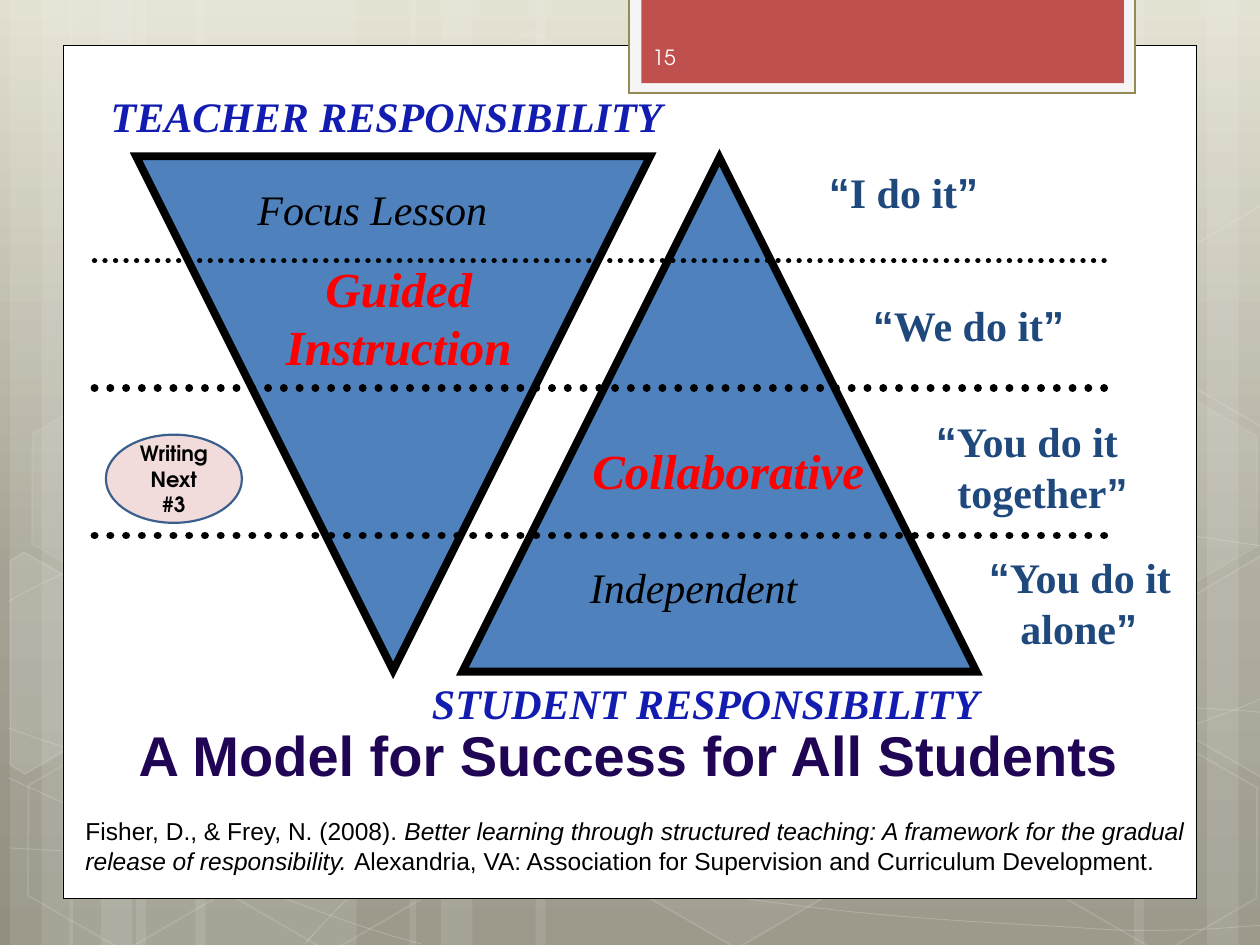
from copy import deepcopy
from math import cos, radians, sin
from lxml.etree import SubElement
from pptx import Presentation
from pptx.dml.color import RGBColor
from pptx.enum.dml import MSO_LINE
from pptx.enum.shapes import MSO_CONNECTOR, MSO_SHAPE
from pptx.enum.text import MSO_ANCHOR, PP_ALIGN
from pptx.oxml.ns import qn
from pptx.util import Cm, Pt

SERIF, SANS, ROUND = "Times New Roman", "Arial", "TeX Gyre Adventor"
WHITE, BLACK, RED, NAVY, BLUE = "FFFFFF", "000000", "FF0000", "1F497D", "131CB0"
OPEN, CLOSE = ("“", {"font": SANS}), ("”", {"font": SANS})


def size(*nums):
    """Turn inches into lengths."""
    return [Cm(2.54 * n) for n in nums]


def rgb(code):
    return RGBColor.from_string(code)


def fade(part, alpha):
    """Set the opacity, in percent, of the colour in a fill or line element."""
    if alpha < 100:
        tone = part.find(".//" + qn("a:srgbClr"))
        SubElement(tone, qn("a:alpha"), val=str(alpha * 1000))


def write(frame, paras, wrap=True, align=PP_ALIGN.LEFT, anchor=MSO_ANCHOR.TOP,
          indent=0, **base):
    """Fill a frame; a paragraph is a list of runs, each text or (text, format)."""
    frame.word_wrap, frame.vertical_anchor = wrap, anchor
    for i, runs in enumerate(paras):
        para = frame.add_paragraph() if i else frame.paragraphs[0]
        para.alignment = align
        if i and indent:
            para._p.get_or_add_pPr().set("marL", str(size(indent)[0]))
        for item in runs:
            text, extra = (item, {}) if isinstance(item, str) else item
            form = {"font": SERIF, "pt": 24, "color": BLACK, "bold": False,
                    "italic": False, **base, **extra}
            run = para.add_run()
            run.text = text
            run.font.name, run.font.size = form["font"], Pt(form["pt"])
            run.font.bold, run.font.italic = form["bold"], form["italic"]
            run.font.color.rgb = rgb(form["color"])


def spin(points, mid, angle):
    """Turn points about a middle, clockwise by an angle in degrees."""
    c, s = cos(radians(angle)), sin(radians(angle))
    gaps = [(x - mid[0], y - mid[1]) for x, y in points]
    return [(mid[0] + x * c - y * s, mid[1] + x * s + y * c) for x, y in gaps]


def bend(shape):
    """Make each three straight steps of an outline one cubic curve."""
    steps = list(shape.element.iter(qn("a:lnTo")))
    for first in steps[::3]:
        k = steps.index(first)
        arc = first.makeelement(qn("a:cubicBezTo"))
        first.addprevious(arc)
        for step in steps[k:k + 3]:
            arc.append(step[0])
            step.getparent().remove(step)


class Page:
    def __init__(self, slide):
        self.slide, self.shapes = slide, slide.shapes

    def backdrop(self, stops):
        fill = self.slide.background.fill
        fill.gradient()
        fill.gradient_angle = 270
        first = next(self.slide.element.iter(qn("a:gs")))
        first.addnext(deepcopy(first))
        for stop, (place, code) in zip(fill.gradient_stops, stops):
            stop.position, stop.color.rgb = place, rgb(code)

    def paint(self, shape, fill=None, alpha=100, line=None, width=1, clear=100):
        shape.shadow.inherit = False
        props = shape.element.spPr
        if fill:
            shape.fill.solid()
            shape.fill.fore_color.rgb = rgb(fill)
            fade(props.find(qn("a:solidFill")), alpha)
        else:
            shape.fill.background()
        if line:
            shape.line.color.rgb, shape.line.width = rgb(line), Pt(width)
            edge = props.find(qn("a:ln"))
            fade(edge, clear)
            SubElement(edge, qn("a:miter"), lim="800000")
        else:
            shape.line.fill.background()
        return shape

    def shape(self, kind, place, turn=0, adjust=None, **look):
        shape = self.shapes.add_shape(kind, *size(*place))
        shape.rotation = turn
        if adjust:
            shape.adjustments[0] = adjust
        return self.paint(shape, **look)

    def outline(self, points, close=False, **look):
        dots = [size(*dot) for dot in points]
        pen = self.shapes.build_freeform(*dots[0], scale=1.0)
        pen.add_line_segments(dots[1:], close=close)
        return self.paint(pen.convert_to_shape(), line=WHITE, **look)

    def wave(self, points):
        bend(self.outline(points, width=0.5, clear=20))

    def cut(self, points, mid, **look):
        """Draw a tilted hexagon that is cut off at the slide's edge."""
        self.outline(spin(points, mid, -30), close=True, clear=12, **look).rotation = 30

    def dots(self, y, width):
        line = self.shapes.add_connector(MSO_CONNECTOR.STRAIGHT, *size(0.75, y, 8.83, y))
        line.line.color.rgb, line.line.width = rgb(BLACK), Pt(width)
        line.line.dash_style = MSO_LINE.ROUND_DOT
        line.element.spPr.find(qn("a:ln")).set("cap", "rnd")
        SubElement(line.element.spPr, qn("a:effectLst"))

    def text(self, place, paras, **form):
        write(self.shapes.add_textbox(*size(*place)).text_frame, paras, **form)

    def title(self, place, text, **form):
        title = self.shapes.title
        title.left, title.top, title.width, title.height = size(*place)
        title.element.getparent().append(title.element)
        write(title.text_frame, [[text]], **form)


def scenery(page):
    page.backdrop([(0, "E2DFCF"), (0.62, "A5A293"), (1, "928F80")])
    bands = [(1.08, 1.75, 0), (0.08, 0.5, 0), (0.33, 0.83, 0), (1.55, 1.75, 0),
             (0.55, 0.5, 0), (0.8, 0.83, 0), (7.33, 1.75, 180), (9.58, 0.5, 180),
             (9, 0.83, 180), (4.25, 3.08, 0), (3.25, 0.5, 0), (3.5, 0.83, 0)]
    for x, wide, turn in bands:
        page.shape(MSO_SHAPE.RECTANGLE, (x, 0, wide, 7.5), turn=turn, fill=WHITE, alpha=10)
    waves = [
        [(0.07, 6.73), (0.61, 6.76), (1.15, 6.79), (1.9, 6.78), (2.65, 6.77),
         (3.58, 6.75), (4.58, 6.65), (5.58, 6.55), (7, 6.36), (7.92, 6.17),
         (8.83, 5.98), (9.77, 5.68), (10.07, 5.51)],
        [(0.07, 4.77), (0.36, 4.61), (0.65, 4.46), (1.21, 4.31), (1.78, 4.16),
         (2.59, 3.94), (3.47, 3.87), (4.36, 3.8), (5.44, 3.79), (6.54, 3.87),
         (7.64, 3.95), (9.47, 4.26), (10.07, 4.34)],
        [(0.06, 6.17), (1.27, 6.72), (2.47, 7.27), (3.34, 7.49)],
        [(0.07, 5.78), (0.38, 5.89), (0.7, 6), (1.28, 6.16), (1.86, 6.31),
         (2.73, 6.56), (3.57, 6.73), (4.4, 6.9), (5.45, 7.08), (6.28, 7.18),
         (7.11, 7.29), (8, 7.33), (8.53, 7.36), (9.05, 7.4), (9.19, 7.38),
         (9.45, 7.38), (9.71, 7.37), (9.89, 7.35), (10.07, 7.34)],
        [(2.42, 7.49), (2.6, 7.29), (2.78, 7.09), (3.02, 6.91), (3.26, 6.73),
         (3.6, 6.53), (3.88, 6.39), (4.16, 6.25), (4.33, 6.19), (4.7, 6.09),
         (5.06, 5.99), (5.73, 5.85), (6.08, 5.78), (6.44, 5.71), (6.49, 5.71),
         (6.8, 5.69), (7.11, 5.66), (7.6, 5.63), (7.94, 5.62), (8.29, 5.61),
         (8.86, 5.62), (8.86, 5.62), (9.08, 5.62), (9.31, 5.62), (9.53, 5.62),
         (9.71, 5.63), (9.88, 5.64), (9.97, 5.65), (10.06, 5.66), (10.03, 5.65),
         (10.06, 5.66)],
    ]
    for wave in waves:
        page.wave(wave)
    cells = [(3.34, 0.36, 4, 8), (4.97, 5.89, 6, 12), (0.11, 5.91, 0, 12),
             (0.14, 3.12, 7, 8), (1.74, 5.92, 0, 12), (7.53, 4.53, 10, 12),
             (8.34, 5.93, 0, 12), (8.34, 3.14, 7, 8)]
    for x, y, alpha, clear in cells:
        page.shape(MSO_SHAPE.HEXAGON, (x, y, 1.75, 1.52), turn=30, adjust=0.285,
                   fill=WHITE if alpha else None, alpha=alpha, line=WHITE, clear=clear)
    page.cut([(0.08, 4.45), (0.19, 4.38), (0.96, 4.82), (0.95, 5.7), (0.2, 6.14),
              (0.08, 6.07)], (0.36, 5.35), fill=WHITE, alpha=10)
    side = [(9.26, 2.07), (10.01, 1.63), (10.09, 1.68), (10.09, 3.35), (10.02, 3.39),
            (9.26, 2.95)]
    page.cut([(x, y + 2.78) for x, y in side], (9.85, 5.2), fill=WHITE, alpha=4)
    page.cut(side, (9.85, 2.41))
    box = MSO_SHAPE.RECTANGLE
    page.shape(box, (0.5, 0.36, 9, 6.77), fill=WHITE, line=BLACK, width=0.5)
    page.shape(box, (4.99, -0.02, 4.02, 0.76), fill="F5F5F5", line="948A54", width=1.25)
    page.shape(box, (5.09, -0.02, 3.83, 0.68), fill="C0504D")


def model(page):
    mid = PP_ALIGN.CENTER
    for x, y, turn in [(3.67, 1.25, 0), (1.08, 1.24, 180)]:
        page.shape(MSO_SHAPE.ISOSCELES_TRIANGLE, (x, y, 4.08, 4.08), turn=turn,
                   fill="4F81BD", line=BLACK, width=4.5)
    head = {"color": BLUE, "bold": True, "italic": True}
    page.text((0.78, 0.67, 4.58, 0.5), [["TEACHER RESPONSIBILITY"]], wrap=False, **head)
    page.text((3.33, 5.33, 4.75, 0.5), [["STUDENT RESPONSIBILITY"]], **head)
    for y, width in [(2.07, 3), (3.08, 4.5), (4.25, 4.5)]:
        page.dots(y, width)
    page.text((1.83, 1.41, 2.25, 0.5), [["Focus Lesson"]], align=mid, italic=True)
    key = {"pt": 28, "color": RED, "bold": True, "italic": True, "align": mid}
    page.text((2, 2, 2.33, 1.03), [["Guided Instruction"]], **key)
    page.text((4.6, 3.45, 2.36, 0.57), [["Collaborative"]], wrap=False, **key)
    page.text((4.58, 4.41, 1.85, 0.5), [["Independent"]], wrap=False, align=mid, italic=True)
    quotes = [((6.48, 1.27, 1.39, 0.5), ["I do it"], 0),
              ((6.83, 2.33, 1.74, 0.5), ["We do it"], 0),
              ((7.33, 3.25, 1.77, 0.9), ["You do it", "together"], 0.17),
              ((7.75, 4.33, 1.68, 0.9), ["You do it", "alone"], 0.25)]
    for place, words, indent in quotes:
        lines = [[word] for word in words]
        lines[0].insert(0, OPEN)
        lines[-1].append(CLOSE)
        page.text(place, lines, wrap=False, indent=indent, color=NAVY, bold=True)
    page.title((0.28, 5.67, 9.42, 0.63), "A Model for Success for All Students",
               font=SANS, pt=32, color="200555", bold=True, align=mid,
               anchor=MSO_ANCHOR.MIDDLE)
    book = ("Better learning through structured teaching: A framework for the gradual "
            "release of responsibility. ")
    page.text((0.58, 6.43, 9.09, 0.8), [[
        "Fisher, D., & Frey, N. (2008). ", (book, {"italic": True}),
        "Alexandria, VA: Association for Supervision and Curriculum Development."]],
        font=SANS, pt=14)
    badge = page.shape(MSO_SHAPE.FLOWCHART_CONNECTOR, (0.84, 3.45, 1.08, 0.7),
                       fill="F2DCDB", line="3A5F8C", width=1.25)
    small = {"font": ROUND, "pt": 12, "anchor": MSO_ANCHOR.MIDDLE}
    write(badge.text_frame, [["Writing Next"], ["#3"]], align=mid, bold=True, **small)
    page.text((5.08, 0.25, 1.46, 0.4), [["15"]], color="FEFEFE", **small)


def main():
    deck = Presentation()
    deck.slide_width, deck.slide_height = size(10, 7.5)
    page = Page(deck.slides.add_slide(deck.slide_layouts[5]))
    scenery(page)
    model(page)
    deck.save("out.pptx")


if __name__ == "__main__":
    main()
